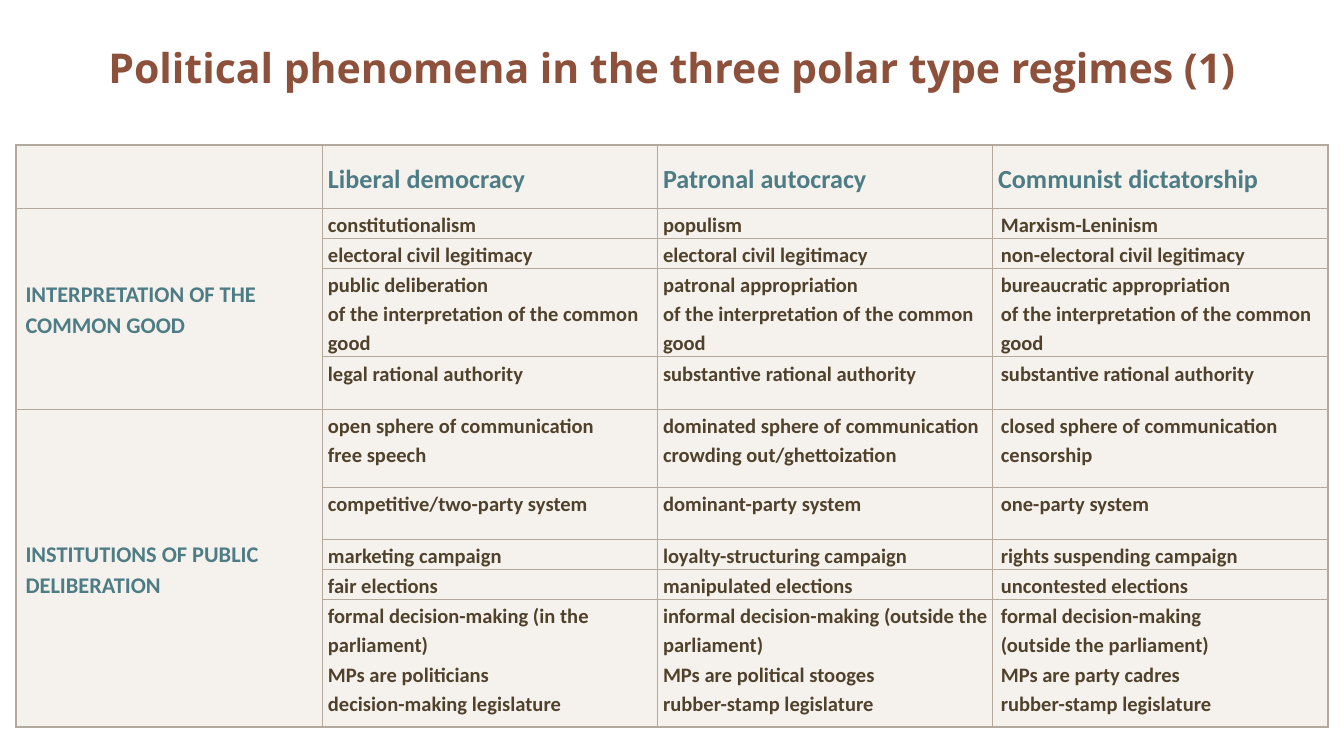
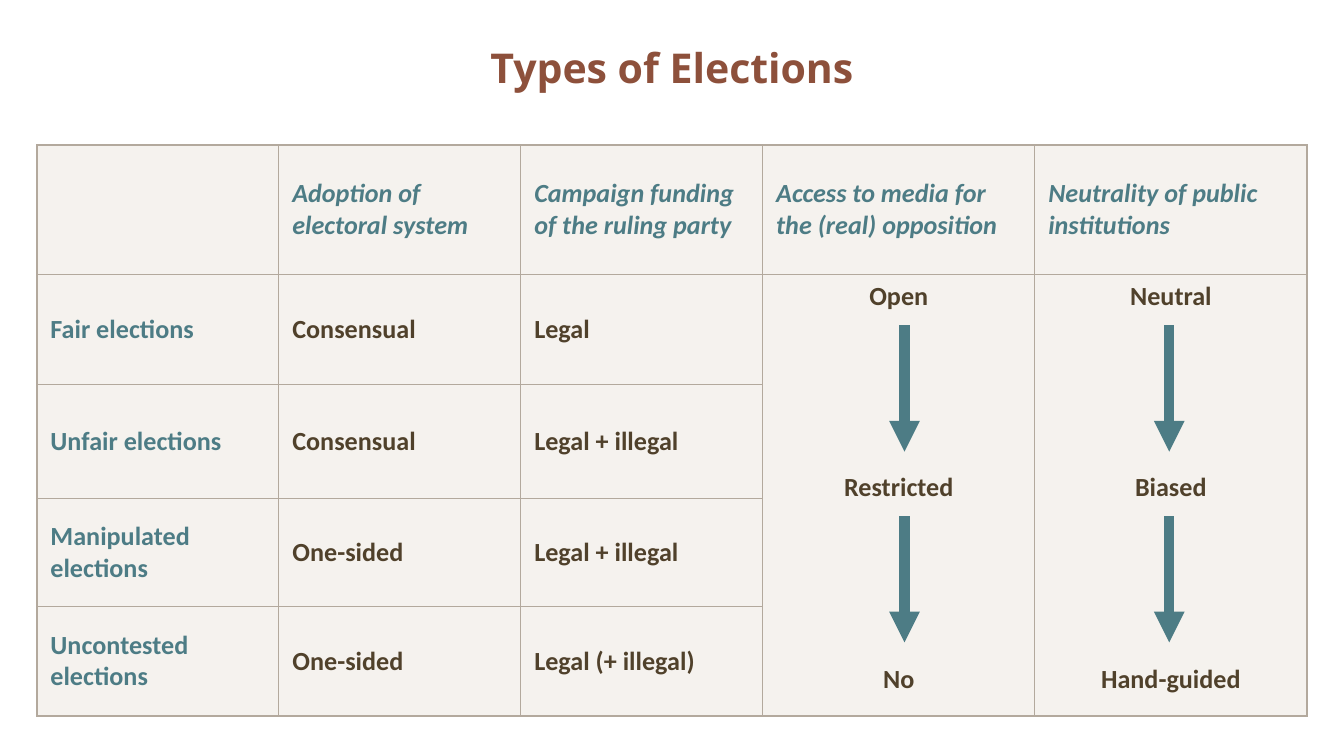
from copy import deepcopy
from dataclasses import dataclass, field

from lxml import etree
from pptx import Presentation
from pptx.dml.color import RGBColor
from pptx.enum.shapes import MSO_CONNECTOR
from pptx.enum.text import MSO_ANCHOR, PP_ALIGN
from pptx.oxml.ns import qn
from pptx.util import Inches, Pt

STRAIGHT = MSO_CONNECTOR.STRAIGHT
TOP, MIDDLE = MSO_ANCHOR.TOP, MSO_ANCHOR.MIDDLE
LEFT, CENTER = PP_ALIGN.LEFT, PP_ALIGN.CENTER
PAGE_WIDTH = 10
PAGE_HEIGHT = PAGE_WIDTH * 9 / 16


@dataclass(frozen=True)
class Theme:
    title_font: str = "Open Sans"
    body_font: str = "Calibri"
    title_color: str = "8D503B"
    heading_color: str = "4D7C85"
    body_color: str = "50412B"
    cell_color: str = "EFEAE4"
    cell_opacity: int = 60
    border_color: str = "B3A99D"
    outer_border: float = 1
    inner_border: float = 0.5
    arrow_width: float = 5.5
    title_size: float = 22
    heading_size: float = 14
    stub_size: float = 12
    body_size: float = 11


THEME = Theme()


@dataclass(frozen=True)
class CellStyle:
    size: float
    color: str
    italic: bool = False
    anchor: MSO_ANCHOR = MIDDLE
    align: PP_ALIGN = LEFT
    margins: tuple[float, float, float, float] = (0.1, 0.05, 0.1, 0.05)
    indent: float = 0
    line_spacing: float | None = None
    gap: float = 0


@dataclass(frozen=True)
class Grid:
    """A centred table whose last columns share the width left by the fixed ones."""
    top: float
    width: float
    fixed_columns: list[float]
    row_heights: list[float]
    texts: list[list[str]]
    heading: CellStyle
    stub: CellStyle
    body: CellStyle
    column_styles: dict[int, CellStyle] = field(default_factory=dict)
    merges: list[tuple[int, int, int]] = field(default_factory=list)

    def style(self, row: int, column: int) -> CellStyle:
        if row == 0:
            return self.heading
        if column == 0:
            return self.stub
        return self.column_styles.get(column, self.body)


@dataclass(frozen=True)
class Arrow:
    x: float
    top: float
    length: float = 0.94


def add_title(page, text: str) -> None:
    box = page.shapes.add_textbox(Inches(0.12), Inches(0), Inches(9.76), Inches(1))
    frame = box.text_frame
    frame.word_wrap = True
    frame.vertical_anchor = MIDDLE
    frame.text = text
    para = frame.paragraphs[0]
    para.alignment = CENTER
    font = para.runs[0].font
    font.name, font.size, font.bold = THEME.title_font, Pt(THEME.title_size), True
    font.color.rgb = RGBColor.from_string(THEME.title_color)


def format_text(cell, text: str, style: CellStyle) -> None:
    cell.vertical_anchor = style.anchor
    (cell.margin_left, cell.margin_top,
     cell.margin_right, cell.margin_bottom) = map(Inches, style.margins)
    cell.text_frame.text = text
    for index, para in enumerate(cell.text_frame.paragraphs):
        para.alignment = style.align
        para.line_spacing = style.line_spacing
        if index and style.gap:
            para.space_before = Pt(style.gap)
        if style.indent:
            para._p.get_or_add_pPr().set("marL", str(Inches(style.indent)))
        for span in para.runs:
            font = span.font
            font.name, font.size = THEME.body_font, Pt(style.size)
            font.bold, font.italic = True, style.italic
            font.color.rgb = RGBColor.from_string(style.color)
        for line_break in para._p.findall(qn("a:br")):
            line_break.append(deepcopy(para.runs[0]._r.rPr))


def paint_cell(cell, outer_sides: dict[str, bool]) -> None:
    """Fill the cell and draw its borders, thicker on the table's outer sides."""
    cell.fill.solid()
    cell.fill.fore_color.rgb = RGBColor.from_string(THEME.cell_color)
    properties = cell._tc.get_or_add_tcPr()
    color = properties.find(qn("a:solidFill")).find(qn("a:srgbClr"))
    etree.SubElement(color, qn("a:alpha"), val=str(THEME.cell_opacity * 1000))
    for position, (side, is_outer) in enumerate(outer_sides.items()):
        width = THEME.outer_border if is_outer else THEME.inner_border
        line = etree.Element(qn(f"a:ln{side}"), w=str(Pt(width)))
        fill = etree.SubElement(line, qn("a:solidFill"))
        etree.SubElement(fill, qn("a:srgbClr"), val=THEME.border_color)
        properties.insert(position, line)


def add_grid(page, grid: Grid) -> None:
    row_count, column_count = len(grid.texts), len(grid.texts[0])
    shared_count = column_count - len(grid.fixed_columns)
    shared_width = (grid.width - sum(grid.fixed_columns)) / shared_count
    widths = grid.fixed_columns + [shared_width] * shared_count
    table = page.shapes.add_table(
        row_count, column_count,
        Inches((PAGE_WIDTH - grid.width) / 2), Inches(grid.top),
        Inches(grid.width), Inches(sum(grid.row_heights))).table
    table.first_row = table.horz_banding = False
    for column, width in zip(table.columns, widths):
        column.width = Inches(width)
    for row, height in zip(table.rows, grid.row_heights):
        row.height = Inches(height)
    for column, first, last in grid.merges:
        table.cell(first, column).merge(table.cell(last, column))
    for row, texts in enumerate(grid.texts):
        for column, text in enumerate(texts):
            cell = table.cell(row, column)
            if text:
                format_text(cell, text, grid.style(row, column))
            paint_cell(cell, {
                "L": column == 0,
                "R": column == column_count - 1,
                "T": row == 0,
                "B": row + cell.span_height == row_count,
            })


def add_arrow(page, arrow: Arrow) -> None:
    connector = page.shapes.add_connector(
        STRAIGHT, Inches(arrow.x), Inches(arrow.top),
        Inches(arrow.x), Inches(arrow.top + arrow.length))
    connector.line.width = Pt(THEME.arrow_width)
    connector.line.color.rgb = RGBColor.from_string(THEME.heading_color)
    etree.SubElement(connector.line._get_or_add_ln(), qn("a:tailEnd"), type="triangle")
    etree.SubElement(connector._element.spPr, qn("a:effectLst"))


HALF_POINT = 0.5 / 72
TIGHT = (0.04, HALF_POINT, 0.03, 0)
REGIME_BODY = CellStyle(THEME.body_size, THEME.body_color, anchor=TOP,
                        margins=TIGHT, line_spacing=1.15)
REGIMES = Grid(
    top=1.08, width=9.76, fixed_columns=[2.28],
    row_heights=[0.47, 0.2, 0.2, 0.62, 0.39, 0.58, 0.39, 0.2, 0.2, 0.95],
    heading=CellStyle(THEME.heading_size, THEME.heading_color,
                      margins=TIGHT, line_spacing=1.15),
    stub=CellStyle(THEME.stub_size, THEME.heading_color, margins=(0, 0, 0, 0),
                   indent=0.07, line_spacing=1.15),
    body=REGIME_BODY,
    column_styles={3: CellStyle(THEME.body_size, THEME.body_color, anchor=TOP,
                                margins=TIGHT, indent=0.02, line_spacing=1.15)},
    merges=[(0, 1, 4), (0, 5, 9)],
    texts=[
        ["", "Liberal democracy", "Patronal autocracy", "Communist dictatorship"],
        ["INTERPRETATION OF THE COMMON GOOD",
         "constitutionalism", "populism", "Marxism-Leninism"],
        ["", "electoral civil legitimacy", "electoral civil legitimacy",
         "non-electoral civil legitimacy"],
        ["", *(f"{process}\nof the interpretation of the common good" for process in
               ("public deliberation", "patronal appropriation",
                "bureaucratic appropriation"))],
        ["", "legal rational authority", "substantive rational authority",
         "substantive rational authority"],
        ["INSTITUTIONS OF PUBLIC DELIBERATION",
         "open sphere of communication\nfree speech",
         "dominated sphere of communication\ncrowding out/ghettoization",
         "closed sphere of communication\ncensorship"],
        ["", "competitive/two-party system", "dominant-party system",
         "one-party system"],
        ["", "marketing campaign", "loyalty-structuring campaign",
         "rights suspending campaign"],
        ["", "fair elections", "manipulated elections", "uncontested elections"],
        ["",
         "formal decision-making (in the parliament)\n"
         "MPs are politicians\ndecision-making legislature",
         "informal decision-making (outside the parliament)\n"
         "MPs are political stooges\nrubber-stamp legislature",
         "formal decision-making\v(outside the parliament)\n"
         "MPs are party cadres\nrubber-stamp legislature"],
    ],
)

SCALE = CellStyle(THEME.heading_size, THEME.body_color, anchor=TOP,
                  align=CENTER, gap=85.45)
ELECTIONS = Grid(
    top=1.08, width=9.45, fixed_columns=[1.8] * 3,
    row_heights=[0.96, 0.82, 0.85, 0.8, 0.82],
    heading=CellStyle(THEME.heading_size, THEME.heading_color, italic=True),
    stub=CellStyle(THEME.heading_size, THEME.heading_color),
    body=CellStyle(THEME.heading_size, THEME.body_color),
    column_styles={3: SCALE, 4: SCALE},
    merges=[(3, 1, 4), (4, 1, 4)],
    texts=[
        ["", "Adoption of electoral system", "Campaign funding of the ruling party",
         "Access to media for the (real) opposition",
         "Neutrality of public institutions"],
        ["Fair elections", "Consensual", "Legal",
         "Open\nRestricted\nNo", "Neutral\nBiased\nHand-guided"],
        ["Unfair elections", "Consensual", "Legal + illegal", "", ""],
        ["Manipulated elections", "One-sided", "Legal + illegal", "", ""],
        ["Uncontested elections", "One-sided", "Legal (+ illegal)", "", ""],
    ],
)
ARROWS = [Arrow(x, top) for x in (6.73, 8.7) for top in (2.42, 3.84)]


def main() -> None:
    deck = Presentation()
    deck.slide_width, deck.slide_height = Inches(PAGE_WIDTH), Inches(PAGE_HEIGHT)
    blank = deck.slide_layouts[6]

    regimes_page = deck.slides.add_slide(blank)
    add_grid(regimes_page, REGIMES)
    add_title(regimes_page, "Political phenomena in the three polar type regimes (1)")

    elections_page = deck.slides.add_slide(blank)
    add_title(elections_page, "Types of Elections")
    add_grid(elections_page, ELECTIONS)
    for arrow in ARROWS:
        add_arrow(elections_page, arrow)

    deck.save("out.pptx")


if __name__ == "__main__":
    main()
